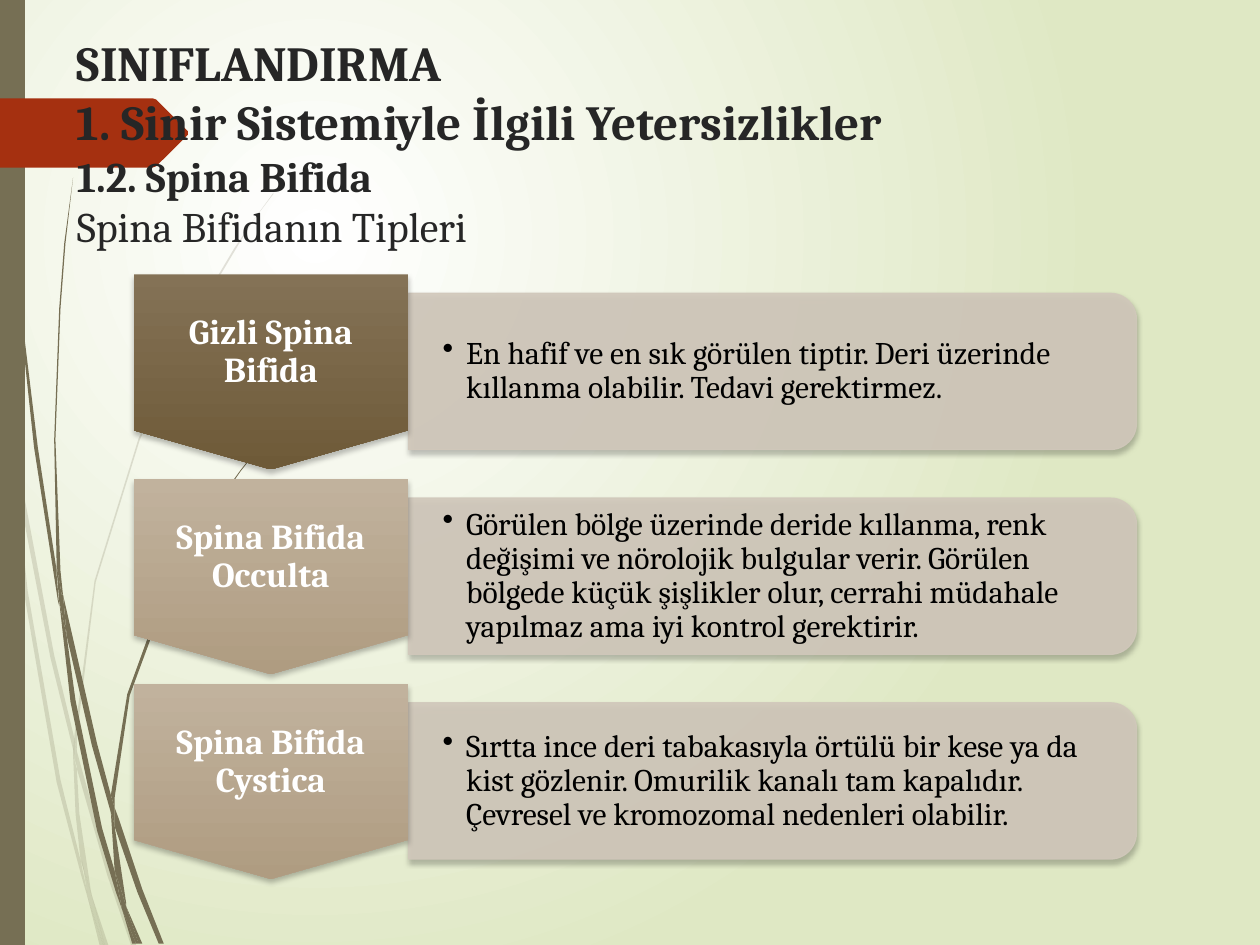
import dataclasses
import typing

import pptx
import pptx.dml.color
import pptx.enum.shapes
import pptx.enum.text
import pptx.oxml
import pptx.oxml.ns
import pptx.util
from lxml import etree

Pt = pptx.util.Pt
SHAPES = pptx.enum.shapes.MSO_SHAPE
ALIGN = pptx.enum.text.PP_ALIGN
ANCHOR = pptx.enum.text.MSO_ANCHOR
Outline = list[tuple[int, int]]


@dataclasses.dataclass(frozen=True)
class Theme:
    font: str = "Cambria"
    olive: str = "766F54"
    red: str = "A53010"
    title: str = "262626"
    body: str = "000000"
    label: str = "FFFFFF"
    bar: str = "D1C8BB"
    background: tuple[str, str] = ("FFFFFF", "DFE8C4")
    dark_marker: tuple[str, str] = ("847256", "6E5A38")
    light_marker: tuple[str, str] = ("C1B29D", "AF9C81")
    heading_size: int = 28
    subheading_size: int = 24
    label_size: int = 20
    body_size: int = 18


@dataclasses.dataclass(frozen=True)
class SpinaBifidaType:
    label: str
    description: str
    marker_colors: tuple[str, str]


class Box(typing.NamedTuple):
    left: float
    top: float
    width: float
    height: float

    def lengths(self) -> list[pptx.util.Length]:
        return [Pt(value) for value in self]


THEME = Theme()
TYPES = [
    SpinaBifidaType("Gizli Spina Bifida", "En hafif ve en sık görülen tiptir. Deri üzerinde kıllanma "
                    "olabilir. Tedavi gerektirmez.", THEME.dark_marker),
    SpinaBifidaType("Spina Bifida Occulta", "Görülen bölge üzerinde deride kıllanma, renk değişimi ve "
                    "nörolojik bulgular verir. Görülen bölgede küçük şişlikler olur, cerrahi müdahale "
                    "yapılmaz ama iyi kontrol gerektirir.", THEME.light_marker),
    SpinaBifidaType("Spina Bifida Cystica", "Sırtta ince deri tabakasıyla örtülü bir kese ya da kist "
                    "gözlenir. Omurilik kanalı tam kapalıdır. Çevresel ve kromozomal nedenleri olabilir.",
                    THEME.light_marker),
]
TITLE_LINES = [
    ("SINIFLANDIRMA", THEME.heading_size, True),
    ("1. Sinir Sistemiyle İlgili Yetersizlikler", THEME.heading_size, True),
    ("1.2. Spina Bifida", THEME.subheading_size, True),
    ("Spina Bifidanın Tipleri", THEME.subheading_size, False),
]

# Outlines are drawn on a grid of 0.72 points
GRID = Pt(0.72)
PALE_STEMS: list[Outline] = [
    [(8, 350), (6, 322), (0, 282), (0, 299), (7, 344)],
    [(40, 522), (59, 599), (59, 586), (43, 520), (10, 345), (12, 376)],
    [(64, 607), (61, 596), (61, 610), (85, 694), (104, 750), (108, 750), (88, 692)],
    [(83, 750), (86, 750), (73, 711)],
    [(64, 683), (48, 619), (22, 469), (12, 376), (8, 350), (19, 470), (45, 621), (64, 693),
     (70, 714), (69, 707)],
    [(58, 599), (60, 646), (64, 683), (67, 692), (73, 711), (72, 706), (63, 646), (61, 610)],
    [(61, 584), (76, 462), (111, 349), (159, 245), (187, 198), (201, 175), (217, 154), (217, 153),
     (201, 175), (186, 197), (158, 244), (110, 348), (75, 461), (59, 584), (59, 586), (61, 596)],
    [(70, 714), (79, 750), (82, 750)],
    [(61, 608), (61, 596), (59, 586), (58, 599)],
    [(67, 692), (65, 683), (69, 707), (70, 714), (82, 750), (83, 750), (73, 711)],
]
OLIVE_STEMS: list[Outline] = [
    [(5, 110), (14, 233), (27, 355), (46, 477), (47, 481), (45, 457), (45, 453), (30, 355),
     (15, 232), (6, 109), (4, 48), (3, 0), (2, 0), (3, 48)],
    [(73, 592), (88, 645), (88, 633), (88, 631), (77, 590), (50, 472), (53, 505)],
    [(94, 649), (91, 641), (91, 656), (109, 708), (126, 749), (130, 749), (113, 706)],
    [(91, 691), (81, 657), (60, 556), (53, 505), (47, 477), (56, 557), (77, 659), (92, 708),
     (97, 722), (96, 717)],
    [(50, 472), (48, 453), (44, 349), (48, 245), (52, 193), (58, 141), (51, 193), (47, 245),
     (43, 349), (45, 449), (49, 472)],
    [(110, 749), (113, 749), (100, 719)],
    [(47, 477), (53, 505), (50, 472), (49, 472), (45, 449), (45, 453)],
    [(91, 633), (103, 552), (131, 476), (169, 406), (191, 374), (203, 359), (216, 344), (215, 344),
     (203, 358), (191, 373), (168, 405), (129, 474), (101, 551), (88, 631), (91, 641)],
    [(97, 722), (105, 749), (108, 749)],
    [(88, 645), (91, 691), (96, 706), (100, 719), (100, 716), (91, 656), (90, 651)],
    [(88, 645), (90, 651), (91, 656), (91, 641), (88, 631)],
    [(96, 706), (91, 691), (96, 717), (97, 722), (108, 749), (110, 749), (100, 719)],
]
RED_TAG: Outline = [(0, 78), (121, 78), (124, 79), (149, 104), (149, 107), (124, 132), (121, 133), (0, 133)]


def rgb(color: str) -> pptx.dml.color.RGBColor:
    return pptx.dml.color.RGBColor.from_string(color)


def add_child(parent, tag: str, **attributes: str):
    child = etree.SubElement(parent, pptx.oxml.ns.qn(tag))
    for name, value in attributes.items():
        child.set(name, value)
    return child


def set_solid(fill, color: str, opacity: int = 100) -> None:
    fill.solid()
    fill.fore_color.rgb = rgb(color)
    if opacity < 100:
        node = fill._xPr.find(".//" + pptx.oxml.ns.qn("a:srgbClr"))
        add_child(node, "a:alpha", val=str(opacity * 1000))


def set_gradient(fill, colors: tuple[str, str]) -> None:
    fill.gradient()
    for stop, color, position in zip(fill.gradient_stops, colors, (0, 1)):
        stop.color.rgb = rgb(color)
        stop.position = position


def add_shadow(shape) -> None:
    shape.shadow.inherit = False
    effects = shape._element.spPr.find(pptx.oxml.ns.qn("a:effectLst"))
    shadow = add_child(effects, "a:outerShdw", blurRad=str(Pt(3)), dist=str(Pt(2)),
                       dir="5400000", algn="ctr", rotWithShape="0")
    color = add_child(shadow, "a:srgbClr", val="000000")
    add_child(color, "a:alpha", val="25000")


def add_outline(shapes, outline: Outline, color: str, opacity: int = 100) -> None:
    builder = shapes.build_freeform(*outline[0], scale=GRID)
    builder.add_line_segments(outline[1:], close=True)
    shape = builder.convert_to_shape()
    shape.shadow.inherit = False
    set_solid(shape.fill, color, opacity)
    shape.line.fill.background()


def add_run(paragraph, text: str, size: int, color: str, bold: bool) -> None:
    run = paragraph.add_run()
    run.text = text
    run.font.name = THEME.font
    run.font.size = Pt(size)
    run.font.bold = bold
    run.font.color.rgb = rgb(color)


def add_text_box(shapes, box: Box, margins: tuple[float, float]):
    frame = shapes.add_textbox(*box.lengths()).text_frame
    frame.word_wrap = True
    frame.vertical_anchor = ANCHOR.MIDDLE
    frame.margin_left = frame.margin_right = Pt(margins[0])
    frame.margin_top = frame.margin_bottom = Pt(margins[1])
    frame.paragraphs[0].line_spacing = 0.9
    return frame.paragraphs[0]


def add_type_row(shapes, item: SpinaBifidaType, top: float) -> None:
    # Description bar: an upright shape turned a quarter about its centre
    length, thickness = 416, 89.25
    center_x, center_y = 441.4, top + 55.5
    bar = shapes.add_shape(SHAPES.ROUND_2_SAME_RECTANGLE, *Box(
        center_x - thickness / 2, center_y - length / 2, thickness, length).lengths())
    bar.rotation = 90
    set_solid(bar.fill, THEME.bar, 90)
    set_solid(bar.line.fill, THEME.bar, 90)
    bar.line.width = Pt(0.75)
    add_shadow(bar)
    paragraph = add_text_box(shapes, Box(233.4, center_y - 40.25, 412, 80.5), (19.5, 10))
    properties = paragraph._p.get_or_add_pPr()
    properties.set("marL", str(Pt(13.5)))
    properties.set("indent", str(Pt(-13.5)))
    add_child(properties, "a:buChar", char="•")
    add_run(paragraph, item.description, THEME.body_size, THEME.body, False)

    # Marker with its label
    marker = shapes.add_shape(SHAPES.FLOWCHART_OFFPAGE_CONNECTOR, *Box(76.5, top, 156.5, 111.5).lengths())
    set_gradient(marker.fill, item.marker_colors)
    marker.fill.gradient_angle = 270
    marker.line.fill.background()
    add_shadow(marker)
    paragraph = add_text_box(shapes, Box(76.5, top, 156.5, 89.25), (6, 3))
    paragraph.alignment = ALIGN.CENTER
    add_run(paragraph, item.label, THEME.label_size, THEME.label, True)


def set_background(slide) -> None:
    fill = slide.background.fill
    set_gradient(fill, THEME.background)
    gradient = slide._element.find(".//" + pptx.oxml.ns.qn("a:gradFill"))
    gradient.remove(gradient.find(pptx.oxml.ns.qn("a:lin")))
    circle = add_child(gradient, "a:path", path="circle")
    add_child(circle, "a:fillToRect", l="50000", t="50000", r="100000", b="100000")


def fill_title(slide) -> None:
    title = slide.shapes.title
    title.left, title.top, title.width, title.height = Box(36.75, 15, 641, 113).lengths()
    title.text_frame.word_wrap = True
    title.text_frame.vertical_anchor = ANCHOR.TOP
    paragraph = title.text_frame.paragraphs[0]
    paragraph.alignment = ALIGN.LEFT
    for index, (text, size, bold) in enumerate(TITLE_LINES):
        if index:
            paragraph.add_line_break()
        add_run(paragraph, text, size, THEME.title, bold)
    slide.shapes._spTree.append(title._element)  # in front of the decoration


def main() -> None:
    presentation = pptx.Presentation()
    presentation.slide_width, presentation.slide_height = Pt(720), Pt(540)
    slide = presentation.slides.add_slide(presentation.slide_layouts[5])
    set_background(slide)

    # Decoration on the left
    for stems, opacity in ((PALE_STEMS, 20), (OLIVE_STEMS, 100)):
        group = slide.shapes.add_group_shape()
        for outline in stems:
            add_outline(group.shapes, outline, THEME.olive, opacity)
    add_outline(slide.shapes, [(0, 0), (20, 0), (20, 750), (0, 750)], THEME.olive)
    add_outline(slide.shapes, RED_TAG, THEME.red)

    # Title and the list of types
    fill_title(slide)
    for row, item in enumerate(TYPES):
        add_type_row(slide.shapes, item, 156.75 + row * 117)
    presentation.save("out.pptx")


if __name__ == "__main__":
    main()
